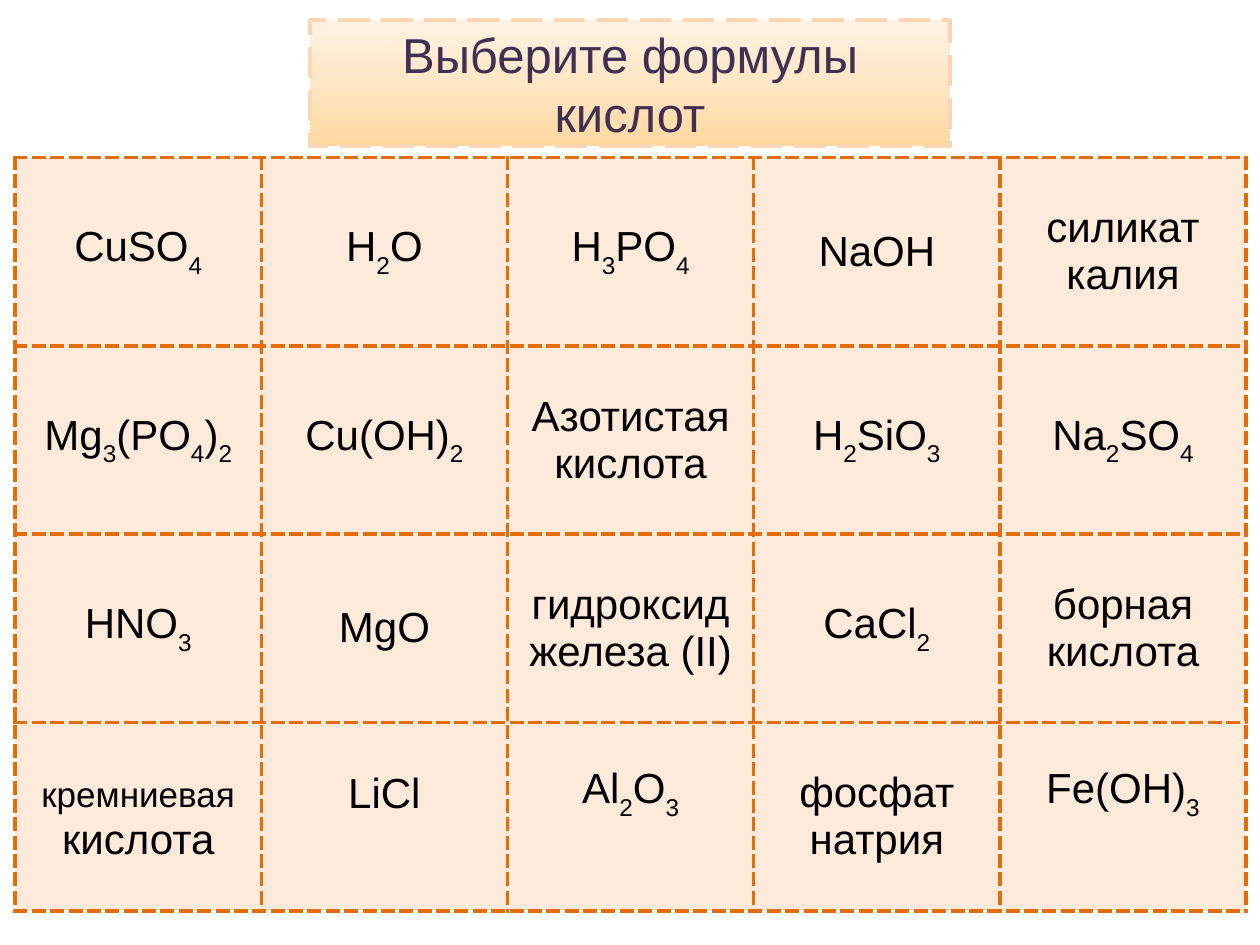
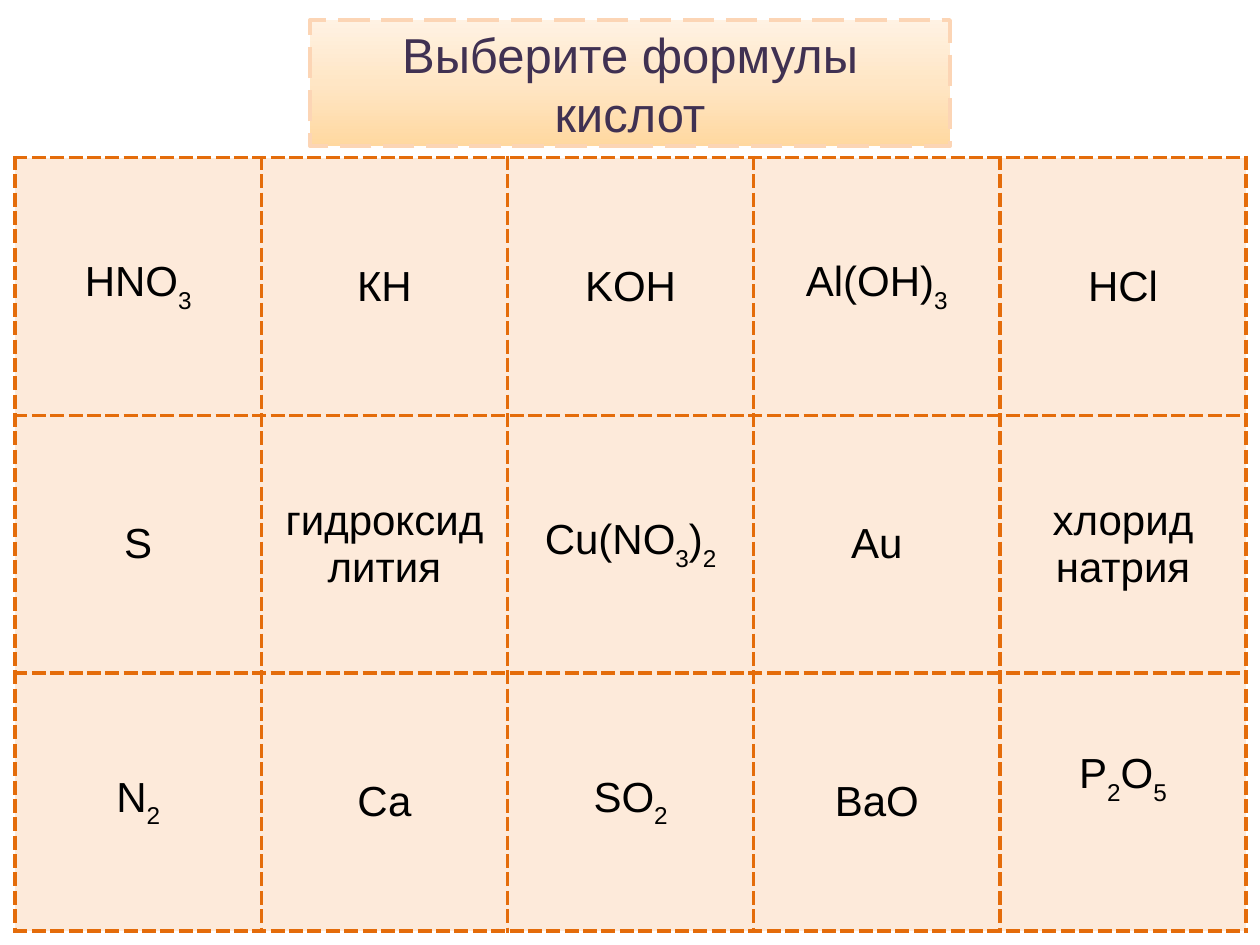
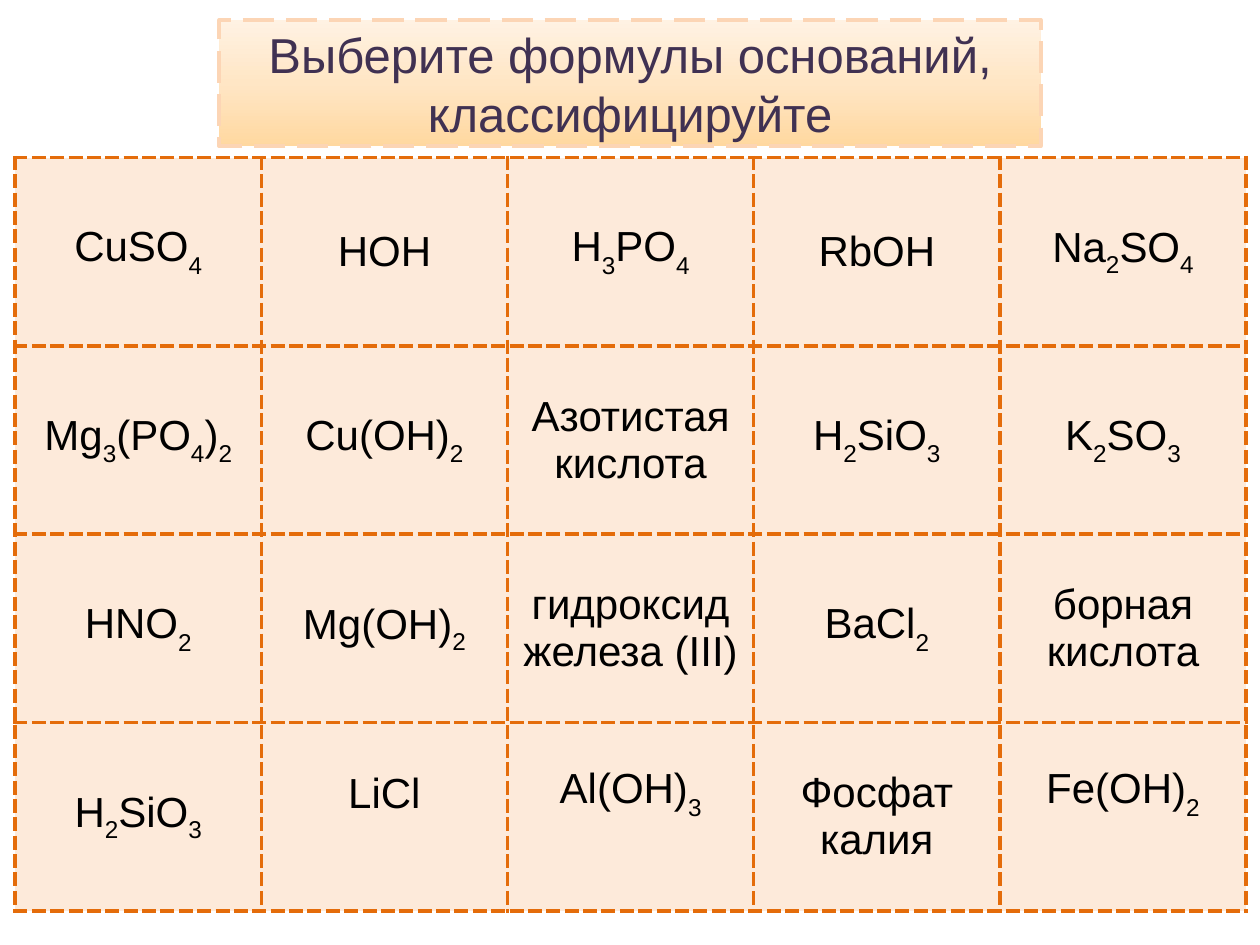
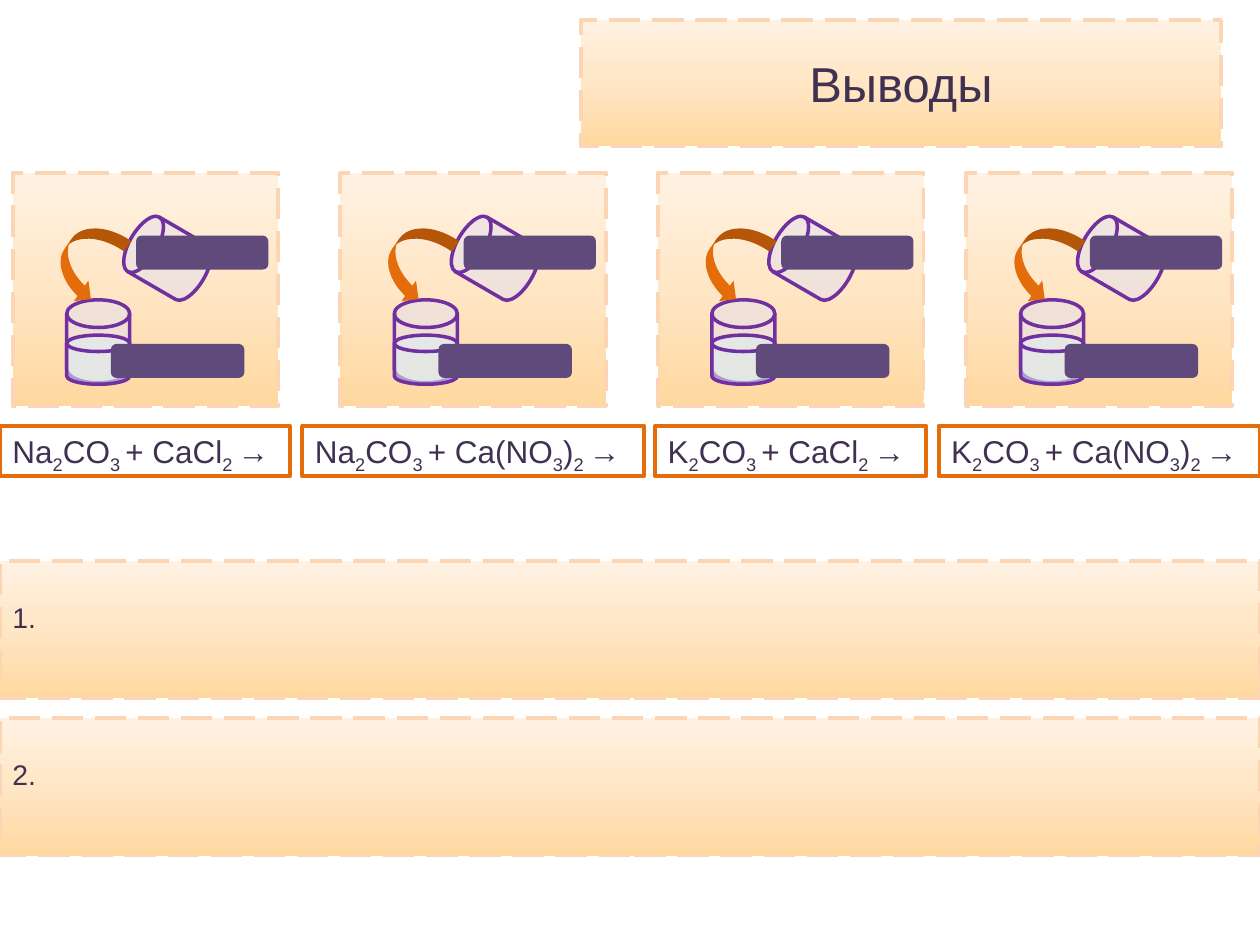
from copy import deepcopy
from itertools import groupby

from lxml import etree
from pptx import Presentation
from pptx.dml.color import RGBColor
from pptx.enum.dml import MSO_LINE
from pptx.enum.shapes import MSO_SHAPE
from pptx.enum.text import MSO_ANCHOR, MSO_AUTO_SIZE, PP_ALIGN
from pptx.oxml.ns import qn
from pptx.util import Inches, Pt

RECT, ROUND = MSO_SHAPE.RECTANGLE, MSO_SHAPE.ROUNDED_RECTANGLE
DISK, ARROW = MSO_SHAPE.FLOWCHART_MAGNETIC_DISK, MSO_SHAPE.CURVED_DOWN_ARROW
DASH = MSO_LINE.LONG_DASH
TOP, MIDDLE = MSO_ANCHOR.TOP, MSO_ANCHOR.MIDDLE
LEFT, CENTER = PP_ALIGN.LEFT, PP_ALIGN.CENTER

WIDE, HIGH = 10, 7.5
FONT = "Arial"
INK, BLACK, ORANGE, PEACH = "403152", "000000", "E46C0A", "FDEADA"
EDGE, PLUM, GLASS = "FCD5B5", "604A7B", "7030A0"
GLOW = [(0, "FFD8A0"), (0.5, "FFE6C5"), (1, "FFF2E3")]
LINE = 2.25

# Digits become subscripts; a part before "|" is set smaller.
# "lifted" cells sit half a line higher; "mild" cells have shallower subscripts.
GRIDS = [
    {"title": "Выберите формулы кислот", "width": 5.08, "height": 5.98,
     "rows": [
         ["CuSO4", "H2O", "H3PO4", "NaOH", "силикат калия"],
         ["Mg3(PO4)2", "Сu(OH)2", "Азотистая кислота", "H2SiO3", "Na2SO4"],
         ["HNO3", "MgO", "гидроксид железа (II)", "CaCl2", "борная кислота"],
         ["кремниевая| кислота", "LiCl", "Al2O3", "фосфат натрия", "Fe(OH)3"]],
     "lifted": {(3, 1), (3, 2), (3, 4)}, "mild": set()},
    {"title": "Выберите формулы кислот", "width": 5.08, "height": 6.14,
     "rows": [
         ["HNO3", "КH", "KOH", "Al(OH)3", "HCl"],
         ["S", "гидроксид лития", "Cu(NO3)2", "Au", "хлорид натрия"],
         ["N2", "Са", "SO2", "BaO", "P2O5"]],
     "lifted": {(2, 4)}, "mild": set()},
    {"title": "Выберите формулы оснований, классифицируйте", "width": 6.52,
     "height": 5.98,
     "rows": [
         ["CuSO4", "HOH", "H3PO4", "RbOH", "Na2SO4"],
         ["Mg3(PO4)2", "Сu(OH)2", "Азотистая кислота", "H2SiO3", "K2SO3"],
         ["HNO2", "Mg(OH)2", "гидроксид железа (III)", "BaCl2", "борная кислота"],
         ["H2SiO3", "LiCl", "Al(OH)3", "Фосфат\nкалия", "Fe(OH)2"]],
     "lifted": {(3, 1), (3, 2), (3, 4)}, "mild": {(0, 4), (2, 1), (3, 0)}},
]

# Equation, left of its card, left and width of its label
TESTS = [
    ("Na2CO3 + CaCl2 →", 0.1, 0, 2.3),
    ("Na2CO3 + Ca(NO3)2 →", 2.7, 2.4, 2.71),
    ("K2CO3 + CaCl2 →", 5.22, 5.2, 2.15),
    ("K2CO3 + Ca(NO3)2 →", 7.67, 7.45, 2.55),
]
# Preset, offset from the card, size, fill, opacity, outline, rotation, mirrored
PARTS = [
    (DISK, 0.43, 1.01, 0.5, 0.66, "E6E0EC", 57, GLASS, 0, False),
    (DISK, 0.98, 0.35, 0.5, 0.66, "E6E0EC", 57, GLASS, 300.2, False),
    (DISK, 0.43, 1.29, 0.5, 0.39, "DBEEF4", 57, GLASS, 0, False),
    (ROUND, 0.98, 0.5, 1.05, 0.27, PLUM, 100, None, 0, False),
    (ARROW, 0.26, 0.5, 0.66, 0.4, ORANGE, 100, None, 305.1, True),
    (ROUND, 0.78, 1.36, 1.06, 0.27, PLUM, 100, None, 0, False),
]
NOTES = [("1.", 4.45), ("2.", 5.7)]


def color(code):
    return RGBColor.from_string(code)


def pieces(text):
    """Split text into (string, is subscript); a space after a digit stays low."""
    low, marks = False, []
    for char in text:
        low = char.isdigit() or (low and char == " ")
        marks.append((char, low))
    for low, group in groupby(marks, key=lambda mark: mark[1]):
        yield "".join(char for char, _ in group), low


def add_run(para, text, size, ink, base=0):
    run = para.add_run()
    run.text = text
    run.font.size, run.font.name = Pt(size), FONT
    run.font.color.rgb = color(ink)
    if base:
        run.font._element.set("baseline", str(base * 1000))


def write(frame, text, size, ink, align=CENTER, base=-30):
    for row, line in enumerate(text.split("\n")):
        para = frame.add_paragraph() if row else frame.paragraphs[0]
        para.alignment = align
        small, _, rest = line.rpartition("|")
        if small:
            add_run(para, small, 20, ink)
        for part, low in pieces(rest):
            add_run(para, part, size, ink, base if low else 0)


def shape(shapes, kind, x, y, w, h, edge=None, weight=LINE):
    item = shapes.add_shape(kind, Inches(x), Inches(y), Inches(w), Inches(h))
    item.shadow.inherit = False
    if edge:
        item.line.color.rgb = color(edge)
        item.line.width = Pt(weight)
    else:
        item.line.fill.background()
    return item


def panel(shapes, x, y, w, h):
    """Dashed box with the shared glow, darker at the bottom."""
    box = shape(shapes, RECT, x, y, w, h, EDGE)
    box.line.dash_style = DASH
    box.fill.gradient()
    box.fill.gradient_angle = 90
    stops = box._element.spPr.find(".//" + qn("a:gsLst"))
    stops.insert(1, deepcopy(stops[0]))
    for stop, (place, code) in zip(box.fill.gradient_stops, GLOW):
        stop.position = place
        stop.color.rgb = color(code)
    return box


def title(slide, text, width, left=None):
    left = (WIDE - width) / 2 if left is None else left
    box = panel(slide.shapes, left, 0.16, width, 1)
    write(box.text_frame, text, 28, INK)


def border(cell):
    props = cell._tc.get_or_add_tcPr()
    for spot, side in enumerate(("lnL", "lnR", "lnT", "lnB")):
        line = etree.Element(qn("a:" + side), w=str(Pt(LINE)))
        fill = etree.SubElement(line, qn("a:solidFill"))
        etree.SubElement(fill, qn("a:srgbClr"), val=ORANGE)
        etree.SubElement(line, qn("a:prstDash"), val="lgDash")
        props.insert(spot, line)


def grid(slide, data):
    rows = data["rows"]
    table = slide.shapes.add_table(
        len(rows), len(rows[0]), Inches(0.12), Inches(1.25),
        Inches(9.77), Inches(data["height"])).table
    table.first_row = table.horz_banding = False
    for r, row in enumerate(rows):
        for c, text in enumerate(row):
            cell = table.cell(r, c)
            cell.vertical_anchor = MIDDLE
            if (r, c) in data["lifted"]:
                cell.margin_bottom = Inches(0.42)
            cell.fill.solid()
            cell.fill.fore_color.rgb = color(PEACH)
            border(cell)
            base = -25 if (r, c) in data["mild"] else -30
            write(cell.text_frame, text, 24, BLACK, base=base)


def test(slide, text, left, start, width):
    """One experiment: card, two vessels, pouring arrow, equation."""
    shapes, top = slide.shapes.add_group_shape().shapes, 1.37
    panel(shapes, left, top, 2.11, 1.85)
    for kind, dx, dy, w, h, code, alpha, edge, turn, mirror in PARTS:
        part = shape(shapes, kind, left + dx, top + dy, w, h, edge, 2)
        part.rotation = turn
        part.fill.solid()
        part.fill.fore_color.rgb = color(code)
        if alpha < 100:
            tone = part._element.spPr.find(qn("a:solidFill"))[0]
            etree.SubElement(tone, qn("a:alpha"), val=str(alpha * 1000))
        if mirror:
            part._element.spPr.find(qn("a:xfrm")).set("flipH", "1")
    label = shape(shapes, RECT, start, 3.38, width, 0.4, ORANGE)
    label.fill.background()
    frame = label.text_frame
    frame.word_wrap = False
    frame.auto_size = MSO_AUTO_SIZE.SHAPE_TO_FIT_TEXT
    frame.vertical_anchor = TOP
    write(frame, text, 18, INK, LEFT, -25)


def main():
    deck = Presentation()
    deck.slide_width, deck.slide_height = Inches(WIDE), Inches(HIGH)
    blank = deck.slide_layouts[6]
    for data in GRIDS:
        slide = deck.slides.add_slide(blank)
        title(slide, data["title"], data["width"])
        grid(slide, data)

    slide = deck.slides.add_slide(blank)
    title(slide, "Выводы", 5.08, 4.61)
    for item in TESTS:
        test(slide, *item)
    for text, top in NOTES:
        frame = panel(slide.shapes, 0, top, WIDE, 1.09).text_frame
        frame.vertical_anchor = TOP
        frame.paragraphs[0].alignment = LEFT
        add_run(frame.paragraphs[0], text, 28, INK, -25)
    deck.save("out.pptx")


if __name__ == "__main__":
    main()
